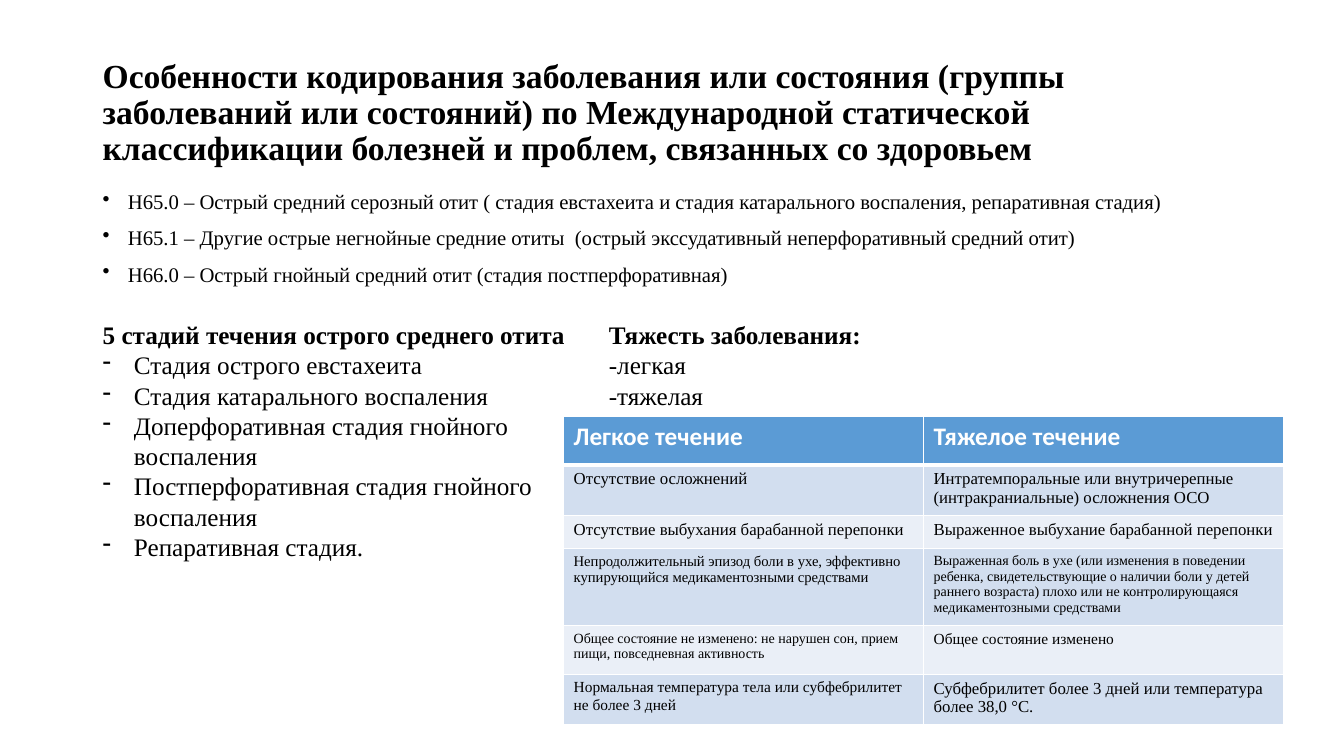
from dataclasses import dataclass

from lxml import etree
from pptx import Presentation
from pptx.dml.color import RGBColor
from pptx.enum.text import MSO_ANCHOR, MSO_AUTO_SIZE
from pptx.oxml.ns import qn
from pptx.util import Inches, Pt

MIDDLE = MSO_ANCHOR.MIDDLE
TOP = MSO_ANCHOR.TOP
GROW = MSO_AUTO_SIZE.SHAPE_TO_FIT_TEXT
FIXED = MSO_AUTO_SIZE.NONE

SERIF = "Times New Roman"
BLACK, WHITE = "000000", "FFFFFF"
HEAD_FILL = "5B9BD5"
BANDS = ("D2DEEF", "EAEFF7")


@dataclass
class Line:
    text: str
    size: float
    bold: bool = False
    bullet: str = ""
    indent: float = 0
    spacing: float = 1
    before: float = 0
    face: str = SERIF
    color: str = BLACK


@dataclass
class Box:
    left: float
    top: float
    width: float
    height: float
    lines: list[Line]
    anchor: MSO_ANCHOR = TOP
    fit: MSO_AUTO_SIZE = GROW


@dataclass
class Row:
    height: float
    texts: tuple[str, str]
    sizes: tuple[float, float]


def rgb(code: str) -> RGBColor:
    return RGBColor.from_string(code)


def write(frame, lines: list[Line]) -> None:
    for index, line in enumerate(lines):
        para = frame.add_paragraph() if index else frame.paragraphs[0]
        para.text = line.text
        para.line_spacing = line.spacing
        para.space_before = Pt(line.before)
        if line.bullet:
            props = para._p.get_or_add_pPr()
            props.set("marL", str(Inches(line.indent)))
            props.set("indent", str(-Inches(line.indent)))
            mark = etree.SubElement(props, qn("a:buChar"))
            mark.set("char", line.bullet)
        font = para.font
        font.name, font.size, font.bold = line.face, Pt(line.size), line.bold
        font.color.rgb = rgb(line.color)


def add_box(slide, box: Box) -> None:
    shape = slide.shapes.add_textbox(
        Inches(box.left), Inches(box.top), Inches(box.width), Inches(box.height)
    )
    frame = shape.text_frame
    frame.word_wrap = True
    frame.auto_size = box.fit
    frame.vertical_anchor = box.anchor
    write(frame, box.lines)


def edge(cell, base: float) -> None:
    """Give a cell white borders; base is the width of the lower one."""
    props = cell._tc.get_or_add_tcPr()
    for index, side in enumerate("LRTB"):
        line = etree.Element(qn(f"a:ln{side}"))
        line.set("w", str(Pt(base if side == "B" else 1)))
        fill = etree.SubElement(line, qn("a:solidFill"))
        etree.SubElement(fill, qn("a:srgbClr")).set("val", WHITE)
        props.insert(index, line)


def add_grid(slide, rows: list[Row]) -> None:
    total = sum(row.height for row in rows)
    table = slide.shapes.add_table(
        len(rows), 2, Inches(5.59), Inches(4.13), Inches(7.14), Inches(total)
    ).table
    for y, row in enumerate(rows):
        table.rows[y].height = Inches(row.height)
        head = y == 0
        for x, (text, size) in enumerate(zip(row.texts, row.sizes)):
            cell = table.cell(y, x)
            cell.fill.solid()
            cell.fill.fore_color.rgb = rgb(HEAD_FILL if head else BANDS[(y - 1) % 2])
            edge(cell, 3 if head or y == 0 else 1)
            face, color = ("Calibri", WHITE) if head else (SERIF, BLACK)
            write(cell.text_frame, [Line(text, size, head, face=face, color=color)])


TITLE = (
    "Особенности кодирования заболевания или состояния (группы заболеваний "
    "или состояний) по Международной статической классификации болезней "
    "и проблем, связанных со здоровьем"
)
CODES = [
    "H65.0 – Острый средний серозный отит ( стадия евстахеита и стадия "
    "катарального воспаления, репаративная стадия)",
    "H65.1 – Другие острые негнойные средние отиты  (острый экссудативный "
    "неперфоративный средний отит)",
    "H66.0 – Острый гнойный средний отит (стадия постперфоративная)",
]
STAGES = [
    "Стадия острого евстахеита",
    "Стадия катарального воспаления",
    "Доперфоративная стадия гнойного воспаления",
    "Постперфоративная стадия гнойного воспаления",
    "Репаративная стадия.",
]
BOXES = [
    Box(0.92, 0.4, 11.5, 1.45, [Line(TITLE, 24, True, spacing=0.9)], MIDDLE, FIXED),
    Box(0.92, 1.85, 11.5, 1.16,
        [Line(code, 14.8, False, "•", 0.25, 0.9, 10) for code in CODES], fit=FIXED),
    Box(0.92, 3.12, 4.82, 2.52,
        [Line("5 стадий течения острого среднего отита", 18, True)]
        + [Line(stage, 18, False, "-", 0.31) for stage in STAGES]),
    Box(5.94, 3.12, 6.48, 1.01,
        [Line("Тяжесть заболевания:", 18, True),
         Line("-легкая", 18), Line("-тяжелая", 18)]),
]
ROWS = [
    Row(0.48, ("Легкое течение", "Тяжелое течение"), (18, 18)),
    Row(0.39, ("Отсутствие осложнений",
               "Интратемпоральные или внутричерепные (интракраниальные) "
               "осложнения ОСО"), (12, 12)),
    Row(0.33, ("Отсутствие выбухания барабанной перепонки",
               "Выраженное выбухание барабанной перепонки"), (12, 12)),
    Row(0.76, ("Непродолжительный эпизод боли в ухе, эффективно "
               "купирующийся медикаментозными средствами",
               "Выраженная боль в ухе (или изменения в поведении ребенка, "
               "свидетельствующие о наличии боли у детей раннего возраста) "
               "плохо или не контролирующаяся медикаментозными средствами"),
        (10.5, 10)),
    Row(0.48, ("Общее состояние не изменено: не нарушен сон, прием пищи, "
               "повседневная активность", "Общее состояние изменено"), (10, 11)),
    Row(0.48, ("Нормальная температура тела или субфебрилитет не более 3 дней",
               "Субфебрилитет более 3 дней или температура более 38,0 °C."),
        (11, 12)),
]


def main() -> None:
    deck = Presentation()
    deck.slide_width, deck.slide_height = Inches(13.33), Inches(7.5)
    slide = deck.slides.add_slide(deck.slide_layouts[6])
    for box in BOXES:
        add_box(slide, box)
    add_grid(slide, ROWS)
    deck.save("out.pptx")


if __name__ == "__main__":
    main()
